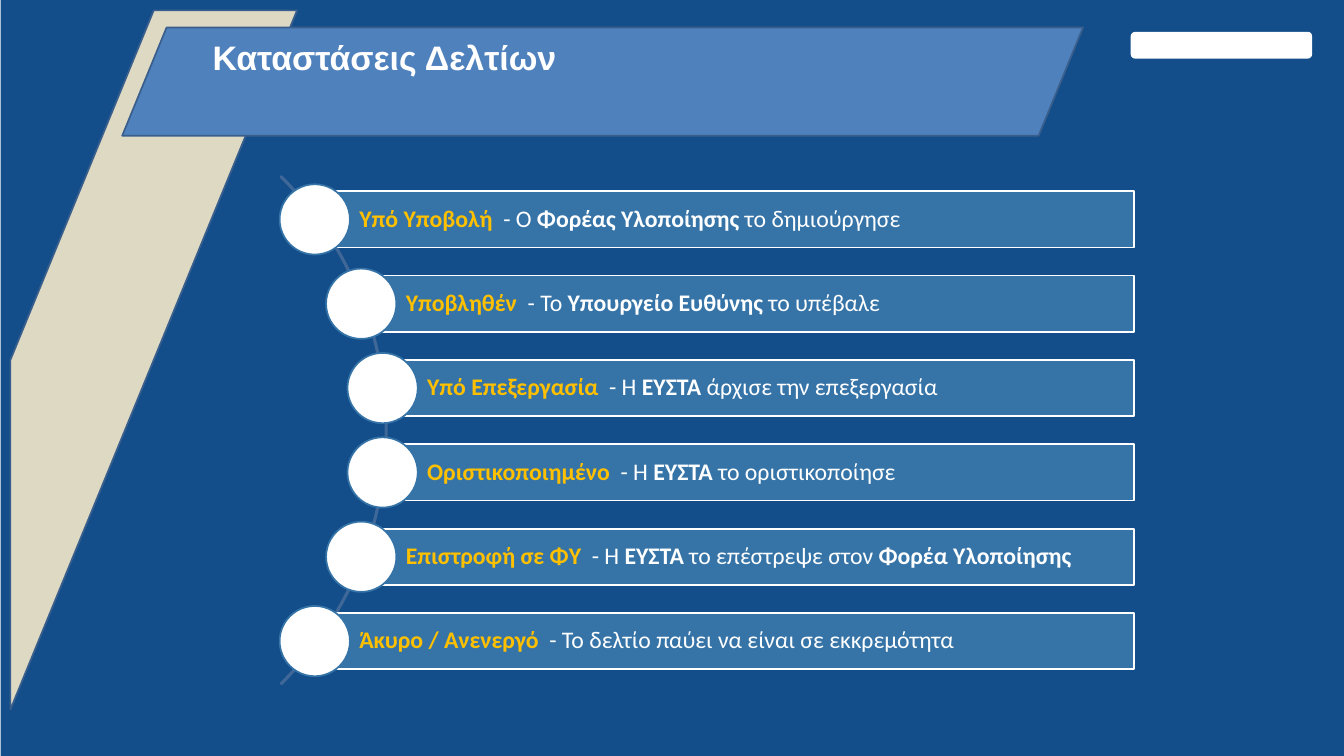
from dataclasses import dataclass

from pptx import Presentation
from pptx.dml.color import RGBColor
from pptx.enum.shapes import MSO_SHAPE
from pptx.enum.text import MSO_ANCHOR, MSO_AUTO_SIZE, PP_ALIGN
from pptx.shapes.autoshape import Shape
from pptx.text.text import _Paragraph
from pptx.util import Inches, Pt

NAVY, BLUE, STEEL, EDGE = "134E8A", "4F81BD", "3674A8", "3A5F8C"
SAND, WHITE, GOLD, AMBER, ARC = "DDD9C3", "FFFFFF", "FFC000", "FF9800", "3F6797"


@dataclass
class Run:
    text: str
    bold: bool = False
    color: str = WHITE


@dataclass
class State:
    left: float  # left edge of the bar, at the centre of its dot
    name: str
    runs: list[Run]


@dataclass
class Stroke:
    points: list[tuple[float, float]]
    close: bool = False


STATES = [
    State(5.15, "Υπό Υποβολή", [Run("- Ο "), Run("Φορέας Υλοποίησης", True), Run(" το δημιούργησε")]),
    State(5.91, "Υποβληθέν", [Run("- Το "), Run("Υπουργείο Ευθύνης", True), Run(" το υπέβαλε")]),
    State(6.26, "Υπό Επεξεργασία", [Run("- Η "), Run("ΕΥΣΤΑ", True), Run(" άρχισε την επεξεργασία")]),
    State(6.26, "Οριστικοποιημένο", [Run("- Η "), Run("ΕΥΣΤΑ", True), Run(" το οριστικοποίησε")]),
    State(5.91, "Επιστροφή σε ΦΥ", [Run("- Η "), Run("ΕΥΣΤΑ", True), Run(" το επέστρεψε στον "),
                                    Run("Φορέα Υλοποίησης", True)]),
    State(5.15, "Άκυρο / Ανενεργό", [Run("- Το δελτίο παύει να είναι σε εκκρεμότητα")]),
]

PIN = [
    Stroke([(2.96, 0.95), (2.79, 1.14), (2.78, 1.17), (2.81, 1.15), (3.01, 0.99)], True),
    Stroke([(3.11, 0.73), (3.24, 0.85), (3.27, 0.86), (3.31, 0.85), (3.33, 0.83),
            (3.32, 0.81), (3.15, 0.65), (3.13, 0.65), (3.11, 0.68)], True),
    Stroke([(3.11, 0.73), (3.02, 0.82), (2.97, 0.81), (2.91, 0.81), (2.87, 0.83),
            (2.86, 0.84), (2.87, 0.85), (3.11, 1.08), (3.12, 1.09), (3.14, 1.08),
            (3.16, 1.03), (3.16, 0.99), (3.14, 0.94), (3.24, 0.85)]),
    Stroke([(3.04, 0.83), (3.10, 0.78)]),
]


def paint(shape: Shape, fill: str | None, line: str | None, width: float = 2) -> None:
    shape.shadow.inherit = False
    if fill:
        shape.fill.solid()
        shape.fill.fore_color.rgb = RGBColor.from_string(fill)
    else:
        shape.fill.background()
    if line:
        shape.line.color.rgb = RGBColor.from_string(line)
        shape.line.width = Pt(width)
    else:
        shape.line.fill.background()


def draw(kind: MSO_SHAPE, left: float, top: float, width: float, height: float,
         fill: str | None, line: str | None = None) -> Shape:
    shape = slide.shapes.add_shape(kind, *map(Inches, (left, top, width, height)))
    paint(shape, fill, line)
    return shape


def write(para: _Paragraph, runs: list[Run], face: str, size: int) -> None:
    para.alignment = PP_ALIGN.LEFT
    for part in runs:
        run = para.add_run()
        run.text = part.text
        run.font.name, run.font.size, run.font.bold = face, Pt(size), part.bold
        run.font.color.rgb = RGBColor.from_string(part.color)


def trace(stroke: Stroke) -> None:
    first, *rest = stroke.points
    path = slide.shapes.build_freeform(*first, scale=Inches(1))
    path.add_line_segments(rest, close=stroke.close)
    paint(path.convert_to_shape(), None, AMBER, 0.96)


deck = Presentation()
deck.slide_width, deck.slide_height = Inches(21.99), Inches(12.37)
slide = deck.slides.add_slide(deck.slide_layouts[6])

# Backdrop and plain block in the top corner
draw(MSO_SHAPE.RECTANGLE, 0.01, 0, 21.98, 12.37, NAVY)
draw(MSO_SHAPE.ROUNDED_RECTANGLE, 18.5, 0.52, 2.97, 0.44, WHITE)

# Title band
draw(MSO_SHAPE.DIAGONAL_STRIPE, 0.17, 0.17, 4.69, 11.44, SAND, EDGE)
band = draw(MSO_SHAPE.PARALLELOGRAM, 2, 0.45, 15.72, 1.77, BLUE, EDGE)
band.adjustments[0] = 0.41
title = slide.shapes.add_textbox(*map(Inches, (3.38, 0.55, 11.66, 0.77))).text_frame
title.word_wrap = True
title.auto_size = MSO_AUTO_SIZE.SHAPE_TO_FIT_TEXT
write(title.paragraphs[0], [Run("Καταστάσεις Δελτίων", True)], "Arial", 40)
for stroke in PIN:
    trace(stroke)

# Arc behind the states
arc = draw(MSO_SHAPE.BLOCK_ARC, -5.43, 1.16, 11.76, 11.76, None, ARC)
for index, value in enumerate((189, 27, 0.002)):
    arc.adjustments[index] = value

# One bar and one dot per state
RIGHT, TOP, STEP, TALL, DOT = 18.56, 3.13, 1.38, 0.92, 1.15
for row, state in enumerate(STATES):
    top = TOP + row * STEP
    bar = draw(MSO_SHAPE.RECTANGLE, state.left, top, RIGHT - state.left, TALL, STEEL, WHITE)
    frame = bar.text_frame
    frame.word_wrap = True
    frame.vertical_anchor = MSO_ANCHOR.MIDDLE
    frame.margin_left = Inches(0.73)
    frame.margin_top = frame.margin_right = frame.margin_bottom = Inches(0.08)
    para = frame.paragraphs[0]
    para.line_spacing = 0.9
    write(para, [Run(state.name + "  ", True, GOLD), *state.runs], "Calibri", 28)
    draw(MSO_SHAPE.OVAL, state.left - DOT / 2, top + (TALL - DOT) / 2, DOT, DOT, WHITE, STEEL)

deck.save("out.pptx")
